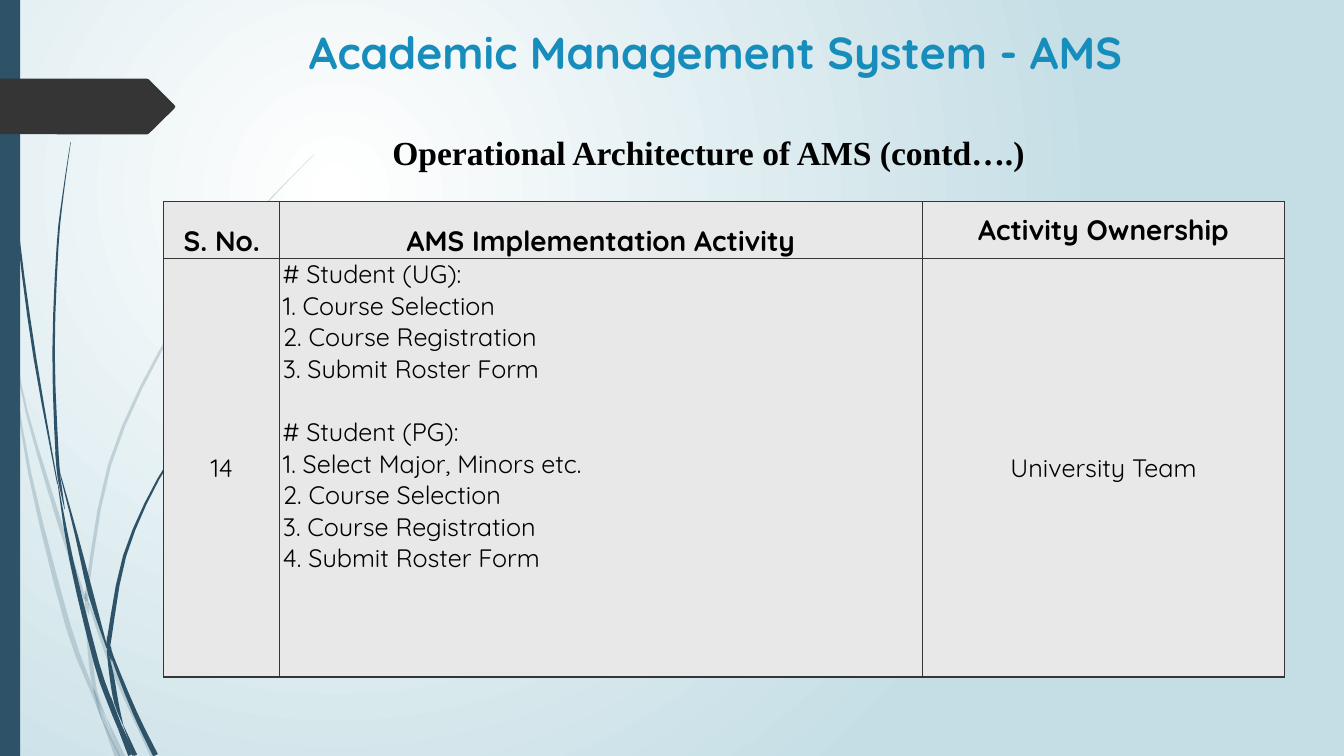
from math import hypot

from lxml import etree
from pptx import Presentation
from pptx.dml.color import RGBColor
from pptx.enum.shapes import MSO_SHAPE
from pptx.enum.text import MSO_ANCHOR, MSO_AUTO_SIZE, PP_ALIGN
from pptx.oxml import parse_xml
from pptx.oxml.ns import nsdecls, qn
from pptx.util import Cm, Pt

RECTANGLE = MSO_SHAPE.RECTANGLE
TOP, MIDDLE, BOTTOM = MSO_ANCHOR.TOP, MSO_ANCHOR.MIDDLE, MSO_ANCHOR.BOTTOM
LEFT, CENTER = PP_ALIGN.LEFT, PP_ALIGN.CENTER
NO_AUTOFIT = MSO_AUTO_SIZE.NONE

NAVY, CHARCOAL, BLUE, BLACK = "2E5369", "353535", "178DBB", "000000"
CELL_GREY, WHITE, PALE_BLUE = "E8E8E8", "FFFFFF", "C5DEE5"
SANS, SERIF = "Quicksand", "Times New Roman"
TITLE_ONLY = 5

# Each piece of a grass blade is a row of (x, y, thickness) in cm along its centre.
PALE_BLADES = [
    [(.03, 7.25, .06), (.13, 8.1, .09), (.27, 8.89, .02)],
    [(.37, 8.76, .02), (.68, 10.4, .06), (1.52, 13.23, .11), (2.14, 15.1, .06)],
    [(2.24, 15.2, .04), (2.71, 16.5, .1), (3.18, 17.6, .11), (3.87, 19.07, .13)],
    [(2.67, 18.06, .01), (3.09, 19.07, .13)],
    [(.28, 8.89, .01), (.75, 11.93, .08), (1.71, 15.75, .13),
     (2.35, 17.47, .09), (2.57, 18.14, .01)],
    [(2.14, 15.23, .02), (2.26, 16.41, .1), (2.4, 17.4, .09), (2.67, 18.06, .01)],
    [(7.92, 3.89, .01), (6.81, 5.02, .03), (5.8, 6.21, .05), (4.04, 8.85, .07),
     (2.76, 11.72, .08), (2.2, 14.83, .08), (2.22, 15.1, .03)],
    [(2.57, 18.14, .01), (2.96, 19.07, .13)],
    [(2.15, 14.9, .02), (2.19, 15.2, .1), (2.24, 15.49, .01)],
    [(2.37, 17.37, .02), (2.58, 18.05, .1), (3.02, 19.07, .02)],
]
DARK_BLADES = [
    [(.09, 0, .03), (.18, 2.79, .03), (.46, 5.92, .05), (.88, 9.02, .07),
     (1.45, 12.2, .02)],
    [(1.53, 11.99, .02), (1.93, 13.5, .07), (2.3, 15.01, .13), (2.7, 16.33, .03)],
    [(2.8, 16.28, .01), (2.84, 16.57, .07), (3.4, 17.96, .11), (3.92, 19.03, .13)],
    [(1.45, 12.12, .01), (1.8, 14.12, .1), (2.43, 16.7, .13),
     (2.8, 17.78, .12), (2.97, 18.34, .01)],
    [(1.78, 3.58, .01), (1.59, 4.9, .03), (1.45, 6.22, .05), (1.35, 8.86, .06),
     (1.44, 11.46, .08), (1.53, 11.99, .01)],
    [(3.1, 18.26, .01), (3.42, 19.03, .08)],
    [(1.4, 11.4, .01), (1.49, 12.05, .07), (1.63, 12.83, .01)],
    [(6.6, 8.74, .01), (5.87, 9.49, .02), (5.19, 10.3, .03), (3.99, 12.07, .05),
     (3.14, 14.01, .08), (2.76, 16.05, .11), (2.75, 16.2, .1)],
    [(2.97, 18.34, .01), (3.28, 19.03, .1)],
    [(2.7, 16.38, .02), (2.81, 17, .11), (2.93, 17.7, .11), (3.1, 18.26, .01)],
    [(2.7, 16.03, .01), (2.75, 16.35, .1), (2.81, 16.66, .01)],
    [(2.79, 17.55, .01), (3.02, 18.3, .11), (3.38, 19.03, .08)],
]
MARKER_OUTLINE = [(0, 0), (3.7, 0), (3.76, .03), (4.39, .66), (4.42, .71),
                  (4.39, .76), (3.76, 1.38), (3.7, 1.41), (0, 1.4)]

HEADINGS = [("S. No.", BOTTOM), ("AMS Implementation Activity", BOTTOM),
            ("Activity Ownership", MIDDLE)]
ACTIVITY_GROUPS = [
    ["# Student (UG):", "1. Course Selection", "2. Course Registration",
     "3. Submit Roster Form"],
    ["# Student (PG):", "1. Select Major, Minors etc.", "2. Course Selection",
     "3. Course Registration", "4. Submit Roster Form"],
]


def color(hex_value):
    return RGBColor.from_string(hex_value)


def paint(shape, hex_value, opacity=100):
    shape.shadow.inherit = False
    shape.fill.solid()
    shape.fill.fore_color.rgb = color(hex_value)
    shape.line.fill.background()
    if opacity < 100:
        fill_color = shape.fill._xPr.find(qn("a:solidFill"))[0]
        etree.SubElement(fill_color, qn("a:alpha")).set("val", str(opacity * 1000))


def add_run(paragraph, text, size, font_name, hex_value, bold=False):
    run = paragraph.add_run()
    run.text = text
    run.font.size = Pt(size)
    run.font.name = font_name
    run.font.bold = bold
    run.font.color.rgb = color(hex_value)


def add_outline(slide, left, top, points):
    corners = [(Cm(left + x), Cm(top + y)) for x, y in points]
    builder = slide.shapes.build_freeform(*corners[0], scale=1.0)
    builder.add_line_segments(corners[1:], close=True)
    return builder.convert_to_shape()


def smooth(knots, steps=3):
    """Return points on a Catmull-Rom curve through the knots."""
    if len(knots) == 2:
        return knots
    padded = [knots[0], *knots, knots[-1]]
    curve = []
    for a, b, c, d in zip(padded, padded[1:], padded[2:], padded[3:]):
        for step in range(steps):
            t = step / steps
            curve.append(tuple(
                q + t * (r - p) / 2 + t * t * (2 * p - 5 * q + 4 * r - s) / 2
                + t ** 3 * (3 * q - p - 3 * r + s) / 2
                for p, q, r, s in zip(a, b, c, d)))
    return curve + [knots[-1]]


def blade_outline(knots):
    curve = smooth(knots)
    right, left = [], []
    for index, (x, y, thickness) in enumerate(curve):
        before = curve[max(index - 1, 0)]
        after = curve[min(index + 1, len(curve) - 1)]
        along_x, along_y = after[0] - before[0], after[1] - before[1]
        half = thickness / 2 / hypot(along_x, along_y)
        right.append((x + along_y * half, y - along_x * half))
        left.append((x - along_y * half, y + along_x * half))
    return right + left[::-1]


def set_background(slide):
    fill = slide.background.fill
    fill.gradient()
    old = fill._xPr.find(qn("a:gradFill"))
    old.getparent().replace(old, parse_xml(
        f'<a:gradFill {nsdecls("a")} rotWithShape="1"><a:gsLst>'
        f'<a:gs pos="0"><a:srgbClr val="{WHITE}"/></a:gs>'
        f'<a:gs pos="100000"><a:srgbClr val="{PALE_BLUE}"/></a:gs></a:gsLst>'
        '<a:path path="circle"><a:fillToRect l="50000" t="50000" r="100000" b="100000"/>'
        '</a:path></a:gradFill>'))


def add_side_decoration(slide, left, top, height):
    for blades, opacity in ((PALE_BLADES, 20), (DARK_BLADES, 100)):
        for knots in blades:
            paint(add_outline(slide, left, top, blade_outline(knots)), NAVY, opacity)
    bar = slide.shapes.add_shape(RECTANGLE, Cm(left), Cm(top), Cm(0.51), Cm(height))
    paint(bar, NAVY)
    paint(add_outline(slide, left, top + 1.98, MARKER_OUTLINE), CHARCOAL)


def place_title(slide, left, top, width, height):
    title = slide.shapes.title
    title.left, title.top, title.width, title.height = map(Cm, (left, top, width, height))
    frame = title.text_frame
    frame.vertical_anchor = TOP
    frame.auto_size = NO_AUTOFIT
    frame.paragraphs[0].alignment = CENTER
    add_run(frame.paragraphs[0], "Academic Management System - AMS", 32, SANS, BLUE, True)


def add_subtitle(slide, left, top, width, height):
    frame = slide.shapes.add_textbox(*map(Cm, (left, top, width, height))).text_frame
    frame.word_wrap = True
    frame.paragraphs[0].alignment = CENTER
    add_run(frame.paragraphs[0], "Operational Architecture of AMS (contd….)",
            24, SERIF, BLACK, True)


def format_cell(cell, anchor):
    cell.vertical_anchor = anchor
    cell.margin_left = cell.margin_right = Cm(0.08)
    cell.margin_top = cell.margin_bottom = 0
    properties = cell._tc.get_or_add_tcPr()
    for side in ("lnL", "lnR", "lnT", "lnB"):
        properties.append(parse_xml(
            f'<a:{side} {nsdecls("a")} w="12700"><a:solidFill>'
            f'<a:srgbClr val="{CHARCOAL}"/></a:solidFill></a:{side}>'))
    cell.fill.solid()
    cell.fill.fore_color.rgb = color(CELL_GREY)


def fill_cell(cell, groups, anchor, alignment, size=18, bold=False):
    """Write each group of lines as a paragraph, one line's height apart."""
    format_cell(cell, anchor)
    frame = cell.text_frame
    for group_index, lines in enumerate(groups):
        paragraph = frame.add_paragraph() if group_index else frame.paragraphs[0]
        paragraph.alignment = alignment
        if group_index:
            paragraph.space_before = Pt(22.5)
        for line_index, line in enumerate(lines):
            if line_index:
                paragraph.add_line_break()
            add_run(paragraph, line, size, SANS, BLACK, bold)


def add_activity_table(slide, left, top, width, height):
    table = slide.shapes.add_table(2, 3, *map(Cm, (left, top, width, height))).table
    table.first_row = table.horz_banding = False
    number_width, activity_width, heading_height = 2.92, 16.19, 1.43
    widths = (number_width, activity_width, width - number_width - activity_width)
    for column, column_width in zip(table.columns, widths):
        column.width = Cm(column_width)
    for row, row_height in zip(table.rows, (heading_height, height - heading_height)):
        row.height = Cm(row_height)
    for column, (heading, anchor) in enumerate(HEADINGS):
        fill_cell(table.cell(0, column), [[heading]], anchor, CENTER, 20, True)
    fill_cell(table.cell(1, 0), [["14"]], MIDDLE, CENTER)
    fill_cell(table.cell(1, 1), ACTIVITY_GROUPS, TOP, LEFT)
    fill_cell(table.cell(1, 2), [["University Team"]], MIDDLE, CENTER)


def main():
    presentation = Presentation()
    presentation.slide_width, presentation.slide_height = Cm(33.87), Cm(19.05)
    slide = presentation.slides.add_slide(presentation.slide_layouts[TITLE_ONLY])
    set_background(slide)
    add_side_decoration(slide, 0, 0, 19.05)
    place_title(slide, 4.12, 0.5, 27.84, 4.88)
    add_subtitle(slide, 3.76, 3.2, 28.19, 1.27)
    add_activity_table(slide, 4.13, 5.08, 28.25, 11.98)
    presentation.save("out.pptx")


if __name__ == "__main__":
    main()
